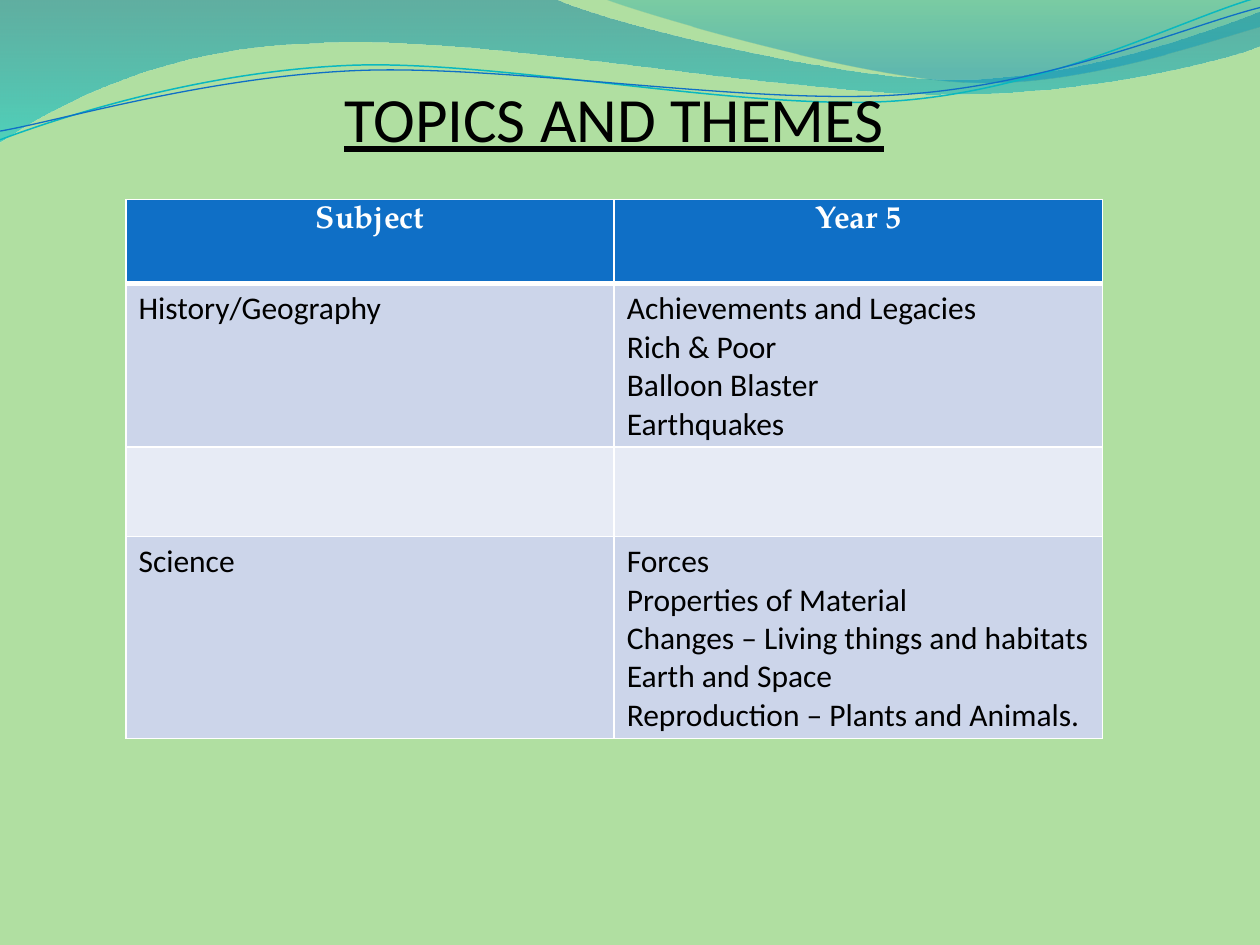
import pptx
import pptx.dml.color
import pptx.enum.text
import pptx.oxml
import pptx.oxml.ns
import pptx.util

Pt = pptx.util.Pt
RGB = pptx.dml.color.RGBColor
CENTER = pptx.enum.text.PP_ALIGN.CENTER
qn = pptx.oxml.ns.qn
NS = pptx.oxml.ns.nsdecls("a")

GREEN = RGB(0xB0, 0xDF, 0xA1)
BLUE = RGB(0x0F, 0x6F, 0xC6)
TEAL = RGB(0x0A, 0xB8, 0xBF)
WHITE = RGB(0xFF, 0xFF, 0xFF)
BLACK = RGB(0, 0, 0)
ROW_DARK = RGB(0xCC, 0xD5, 0xEA)
ROW_LIGHT = RGB(0xE7, 0xEB, 0xF5)
DEEP_TEAL = RGB(0x00, 0x74, 0xA1)
AQUA = RGB(0x00, 0xC6, 0xCF)
SEA = RGB(0x00, 0xA1, 0xA9)
SKY = RGB(0x00, 0x8B, 0xBF)


def add_wave(start, segments, close):
    """Outline from line ends (one point) and cubic curves (three points)."""
    pts = [(Pt(x), Pt(y)) for seg in segments for x, y in seg]
    fb = s.shapes.build_freeform(Pt(start[0]), Pt(start[1]), scale=1.0)
    fb.add_line_segments(pts, close=close)
    sp = fb.convert_to_shape()
    sp.shadow.inherit = False
    # Join each group of three points into one curve
    nodes = iter(sp.element.spPr.findall(".//" + qn("a:lnTo")))
    for seg in segments:
        group = [next(nodes) for _ in seg]
        if len(group) == 3:
            curve = pptx.oxml.parse_xml(f"<a:cubicBezTo {NS}/>")
            group[0].addprevious(curve)
            for node in group:
                curve.append(node[0])
                node.getparent().remove(node)
    return sp


def add_border(tc_pr, side, width):
    tc_pr.append(pptx.oxml.parse_xml(
        f'<a:{side} {NS} w="{Pt(width)}"><a:solidFill>'
        f'<a:srgbClr val="{WHITE}"/></a:solidFill></a:{side}>'))


prs = pptx.Presentation()
prs.slide_width, prs.slide_height = Pt(720), Pt(540)
s = prs.slides.add_slide(prs.slide_layouts[6])
s.background.fill.solid()
s.background.fill.fore_color.rgb = GREEN

# Translucent gradient bands: start, segments, (position, colour, opacity %)
bands = [
    ((0, 0),
     [[(316.8, -0.7)],
      [(342.7, 12.2), (478.1, 45.4), (545.8, 45.4)],
      [(614.2, 45.4), (689.8, 18.7), (720, 6.5)],
      [(720.7, 25.9)],
      [(709.2, 31.7), (626.4, 54.7), (537.1, 54)],
      [(447.8, 54), (275, 20.2), (185, 24.5)],
      [(92.9, 25.9), (33.1, 59.8), (-0.7, 81.4)]],
     [(0, DEEP_TEAL, 45), (1, AQUA, 55)]),
    ((344.9, -0.7),
     [[(366.5, 7.9), (491, 44.6), (553.7, 46.8)],
      [(616.3, 49.7), (691.9, 23), (720, 15.1)],
      [(720, 0)]],
     [(0, SEA, 30), (0.8, SKY, 45)]),
]
for start, segments, stops in bands:
    sp = add_wave(start, segments, True)
    sp.line.fill.background()
    sp.fill.gradient()
    sp.fill.gradient_angle = 270
    for stop, (pos, color, opacity) in zip(sp.fill.gradient_stops, stops):
        stop.position = pos
        stop.color.rgb = color
    clrs = sp.element.spPr.findall(".//" + qn("a:srgbClr"))
    for clr, (pos, color, opacity) in zip(clrs, stops):
        clr.append(pptx.oxml.parse_xml(f'<a:alpha {NS} val="{opacity * 1000}"/>'))

# Thin wave lines
lines = [
    ((0, 79.9),
     [[(34.6, 67), (113.8, 41), (199.4, 37.4)],
      [(284.4, 33.8), (427, 64.1), (513.4, 57.6)],
      [(599.8, 51.1), (675.4, 10.8), (718.6, -1.4)]], TEAL, 0.85),
    ((0, 74.9),
     [[(33.8, 69.1), (118.1, 43.9), (203.8, 40.3)],
      [(290.2, 36.7), (429.8, 60.5), (516.2, 54)],
      [(601.9, 48.2), (677.5, 15.1), (720, 4.3)]], BLUE, 0.75),
]
for start, segments, color, width in lines:
    sp = add_wave(start, segments, False)
    sp.fill.background()
    sp.line.color.rgb = color
    sp.line.width = Pt(width)

# Title
tf = s.shapes.add_textbox(Pt(72), Pt(42), Pt(558), Pt(51)).text_frame
tf.word_wrap = True
p = tf.paragraphs[0]
p.text = "TOPICS AND THEMES"
p.alignment = CENTER
p.font.name, p.font.size, p.font.underline = "Calibri", Pt(36), True
p.font.color.rgb = BLACK

# Topics table: height, fill, cell lines
rows = [
    (48, BLUE, ["Subject"], ["Year 5"]),
    (93.5, ROW_DARK, ["History/Geography"],
     ["Achievements and Legacies", "Rich & Poor", "Balloon Blaster", "Earthquakes"]),
    (51, ROW_LIGHT, [], []),
    (115.5, ROW_DARK, ["Science"],
     ["Forces", "Properties of Material", "Changes – Living things and habitats",
      "Earth and Space", "Reproduction – Plants and Animals."]),
]
height = sum(row[0] for row in rows)
table = s.shapes.add_table(len(rows), 2, Pt(72), Pt(114), Pt(558), Pt(height)).table
for r, (row_height, fill, *texts) in enumerate(rows):
    header = r == 0
    table.rows[r].height = Pt(row_height)
    for c, text in enumerate(texts):
        cell = table.cell(r, c)
        cell.margin_top, cell.margin_bottom = Pt(3.6), Pt(1.8)
        tc_pr = cell._tc.get_or_add_tcPr()
        for side in ("lnL", "lnR", "lnT", "lnB"):
            thick = (r, side) in ((0, "lnB"), (1, "lnT"))
            add_border(tc_pr, side, 3 if thick else 1)
        cell.fill.solid()
        cell.fill.fore_color.rgb = fill
        cell.text = "\n".join(text)
        for p in cell.text_frame.paragraphs:
            p.font.name = "TeX Gyre Pagella" if header else "Calibri"
            p.font.size = Pt(18)
            p.font.bold = header
            p.font.color.rgb = WHITE if header else BLACK
            if header:
                p.alignment = CENTER

prs.save("out.pptx")
